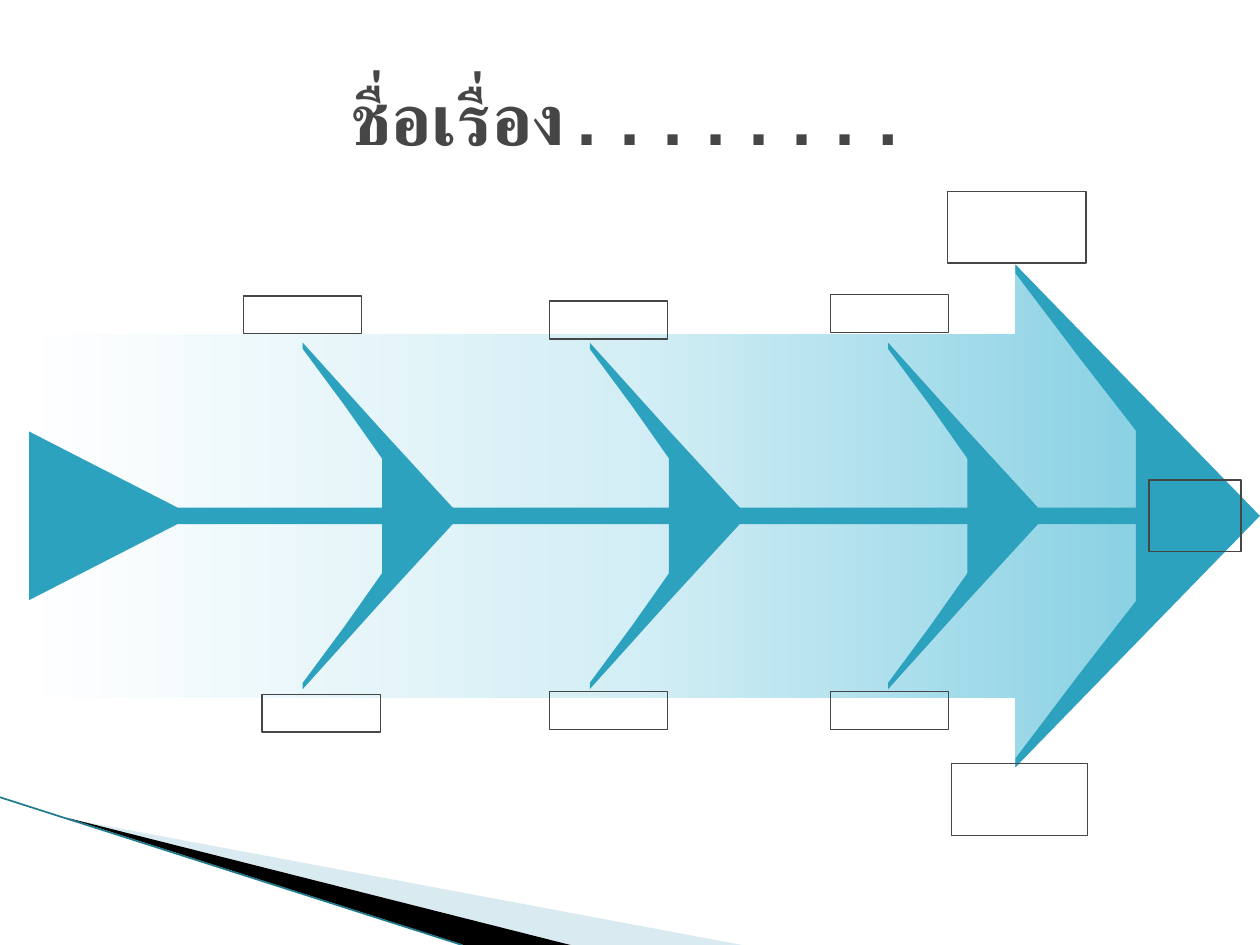
from copy import deepcopy
from dataclasses import dataclass

from lxml import etree
from pptx import Presentation
from pptx.dml.color import RGBColor
from pptx.enum.shapes import MSO_CONNECTOR, MSO_SHAPE
from pptx.enum.text import MSO_ANCHOR, PP_ALIGN
from pptx.oxml.ns import qn
from pptx.util import Pt

RECT = MSO_SHAPE.RECTANGLE
ARROW = MSO_SHAPE.RIGHT_ARROW
WEDGE = MSO_SHAPE.ISOSCELES_TRIANGLE
LINE = MSO_CONNECTOR.STRAIGHT
MIDDLE = MSO_ANCHOR.MIDDLE
CENTER = PP_ALIGN.CENTER


@dataclass(frozen=True)
class Theme:
    ink: str = "464646"
    fish: str = "2DA2BF"
    fade: tuple = ((0, "FFFFFF"), (0.5, "D3EEF5"), (1, "7ACBE0"))
    pale: str = "D9EAF1"
    dark: str = "000000"
    edge: str = "1F7A8C"
    font: str = "Courier New"
    title: float = 41
    thin: float = 0.75


THEME = Theme()
SPINE = 294.8
HEAD = [(720, 0), (580.3, -143.6), (580.3, -138.6), (616.3, -91),
        (683.3, -4.7), (101.5, -4.7), (16.6, -48.2)]
RIB = [(90, 0), (45, -49), (0, -99), (0, -95.4), (24, -63), (68.4, 0)]
RIBS = (173, 337, 507.5)
BOXES = [
    (656.6, 274.3, 52.6, 41), (541.4, 109.4, 79.2, 41),
    (543.6, 436.3, 77.8, 41), (474.5, 168.5, 67.7, 21.6),
    (474.5, 395.3, 67.7, 21.6), (313.9, 172.1, 67.7, 21.6),
    (313.9, 395.3, 67.7, 21.6), (139, 169.2, 67.7, 21.6),
    (149.8, 396.7, 67.7, 21.6),
]


def rgb(code):
    return RGBColor.from_string(code)


def paint(shape, fill=None, line=None):
    shape.shadow.inherit = False
    if fill:
        shape.fill.solid()
        shape.fill.fore_color.rgb = rgb(fill)
    else:
        shape.fill.background()
    if line:
        shape.line.color.rgb = rgb(line)
        shape.line.width = Pt(THEME.thin)
    else:
        shape.line.fill.background()


def preset(shapes, kind, box, fill=None, line=None):
    shape = shapes.add_shape(kind, *map(Pt, box))
    paint(shape, fill, line)
    return shape


def outline(shapes, points, fill):
    points = [(Pt(x), Pt(y)) for x, y in points]
    pen = shapes.build_freeform(*points[0])
    pen.add_line_segments(points[1:], close=True)
    paint(pen.convert_to_shape(), fill)


def write(shape, text, size, color, font, bold=False, align=CENTER):
    frame = shape.text_frame
    frame.word_wrap = True
    frame.vertical_anchor = MIDDLE
    par = frame.paragraphs[0]
    par.alignment = align
    run = par.add_run()
    run.text = text
    run.font.size = Pt(size)
    run.font.bold = bold
    run.font.name = font
    run.font.color.rgb = rgb(color)
    etree.SubElement(run.font._element, qn("a:cs"), typeface=font)


def swoosh(shapes):
    outline(shapes, [(39.6, 468), (424, 540), (326, 540)], THEME.pale)
    outline(shapes, [(38.2, 467.3), (326, 540), (265, 540)], THEME.dark)
    line = shapes.add_connector(LINE, Pt(0), Pt(455.6), Pt(264), Pt(540))
    line.line.color.rgb = rgb(THEME.edge)
    line.line.width = Pt(0.95)
    etree.SubElement(line._element.spPr, qn("a:effectLst"))


def body(shapes):
    shape = preset(shapes, ARROW, (9.4, 151.2, 704.2, 287.3))
    shape.adjustments[0] = 0.723
    shape.adjustments[1] = 0.465
    fill = shape.fill
    fill.gradient()
    fill.gradient_angle = 0
    first = fill.gradient_stops[0]._gs
    first.addnext(deepcopy(first))
    for stop, (pos, color) in zip(fill.gradient_stops, THEME.fade):
        stop.position = pos
        stop.color.rgb = rgb(color)


def bone(shapes, half, left, mid, wide, high):
    wedge = (mid - wide / 2, SPINE - high / 2, wide, high)
    preset(shapes, WEDGE, wedge, THEME.fish).rotation = 90
    lower = [(x, -y) for x, y in reversed(half) if y]
    points = [(left + x, SPINE + y) for x, y in half + lower]
    outline(shapes, points, THEME.fish)


def main():
    deck = Presentation()
    deck.slide_width, deck.slide_height = Pt(720), Pt(540)
    slide = deck.slides.add_slide(deck.slide_layouts[5])
    shapes = slide.shapes
    title = shapes.title
    title.left, title.top = Pt(36), Pt(21.6)
    title.width, title.height = Pt(648), Pt(90)
    write(title, "ชื่อเรื่อง........", size=THEME.title, color=THEME.ink,
          font=THEME.font, bold=True)
    swoosh(shapes)
    body(shapes)
    fish = shapes.add_group_shape().shapes
    bone(fish, HEAD, 0, 675.4, 106.6, 52.6)
    for left in RIBS:
        bone(fish, RIB, left, left + 64.4, 78.5, 38.2)
    for box in BOXES:
        preset(shapes, RECT, box, line=THEME.ink)
    deck.save("out.pptx")


if __name__ == "__main__":
    main()
